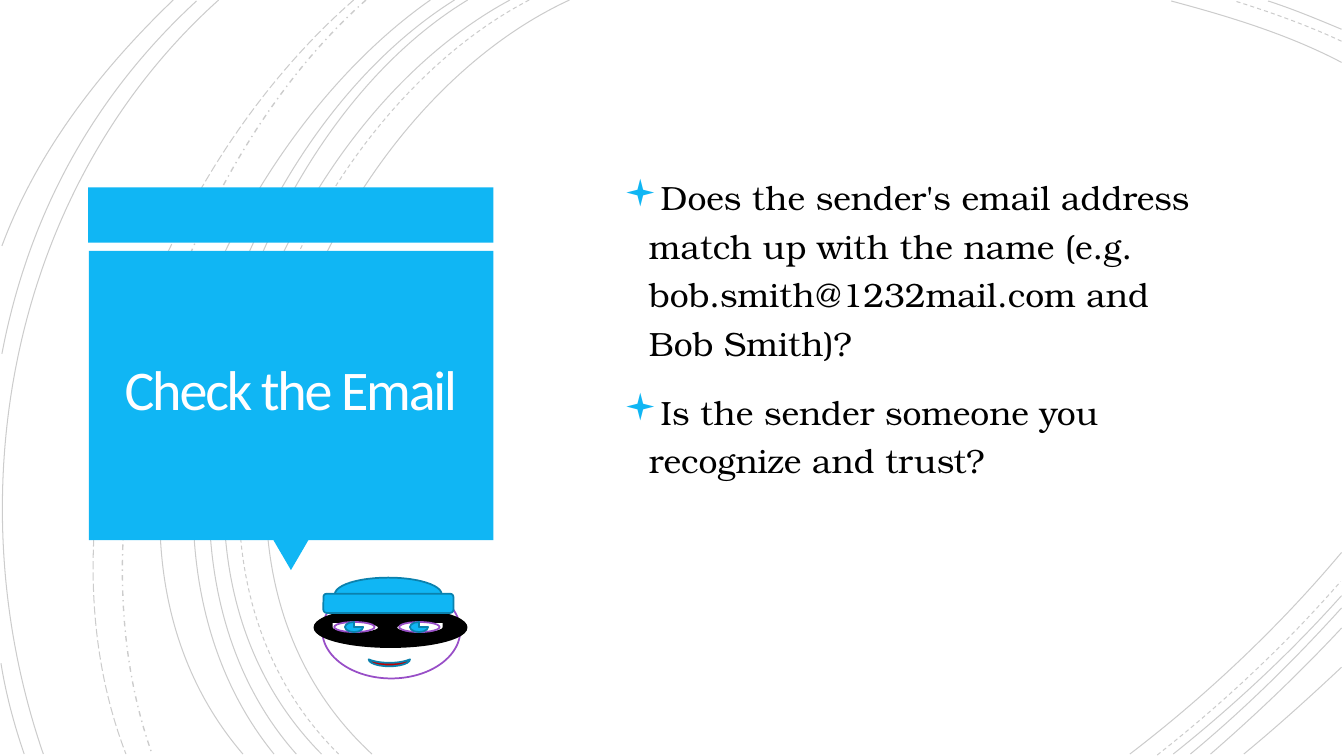
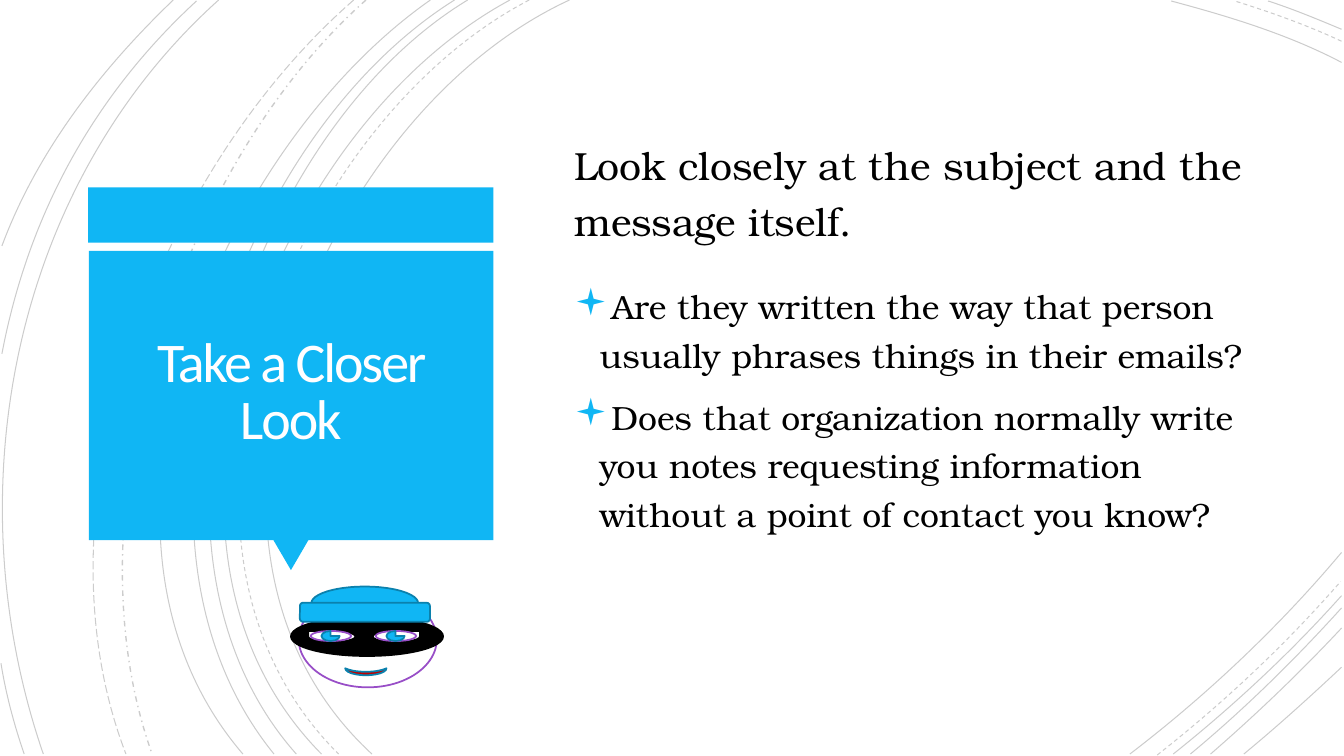
"""Build two slides on checking suspicious emails."""
import lxml.etree
import pptx
import pptx.dml.color
import pptx.enum.dml
import pptx.enum.shapes
import pptx.enum.text
import pptx.oxml.ns
import pptx.util

Pt = pptx.util.Pt
SHAPE = pptx.enum.shapes.MSO_SHAPE
DASH = pptx.enum.dml.MSO_LINE

BLUE, DARK_BLUE, PURPLE = "10B6F4", "0B81AD", "984EC7"
BLACK, WHITE, TITLE_WHITE, RED = "000000", "FFFFFF", "FFFEFF", "C00000"
TITLE_FONT, BODY_FONT = "Calibri", "TeX Gyre Bonum"
BOTTOM = 538.6
RIGHT = 958.3

SOLID_ARCS = [
    [(406.8, 0), (226.8, 82.8), (103, 388.8), (265.7, BOTTOM)],
    [(364.3, 0), (194.4, 91.4), (79.2, 386.6), (229.7, BOTTOM)],
    [(334.1, 0), (175.7, 95.8), (79.2, 389.5), (211.7, BOTTOM)],
    [(324.7, 0), (166.3, 99.4), (69.8, 383.8), (195.8, BOTTOM)],
    [(307.4, 0), (156.2, 105.8), (38.2, 380.9), (173.5, BOTTOM)],
    [(156.2, 0), (7.9, 133.2), (-33.1, 352.8), (31, BOTTOM)],
    [(140.4, 0.7), (66.2, 69.1), (20.2, 154.1), (1.4, 252.7)],
    [(0.7, 473.8), (4.3, 496.1), (10.1, 517.7), (17.3, BOTTOM)],
    [(123.8, 0), (72, 49.7), (26.6, 108), (1.4, 175.7)],
    [(RIGHT, 44.6), (920.2, 24.5), (877, 11.5), (836.6, 0.7)],
    [(RIGHT, 20.9), (941, 13.7), (923.8, 6.5), (905.8, 0.7)],
    [(807.1, BOTTOM), (861.8, 496.8), (913.7, 447.8), (RIGHT, 394.6)],
    [(838.1, BOTTOM), (880.6, 504.7), (921.6, 466.6), (RIGHT, 425.5)],
    [(850.3, BOTTOM), (888.5, 506.9), (924.5, 471.6), (RIGHT, 434.2)],
    [(864.7, BOTTOM), (897.1, 510.5), (928.8, 480.2), (RIGHT, 448.6)],
    [(888.5, BOTTOM), (912.2, 519.1), (935.3, 498.2), (RIGHT, 476.6)],
]
DASHED_ARCS = [
    [(378, 0), (205.2, 90), (88.6, 386.6), (241.9, BOTTOM)],
    [(RIGHT, 29.5), (933.8, 18), (907.2, 8.6), (882, 0.7)],
    [(826.6, 539.3), (873.4, 502.6), (918, 460.8), (957.6, 415.4)],
]
DASH_DOT_ARCS = [[(261.4, 0), (126.7, 119.5), (46.8, 366.5), (108.7, BOTTOM)]]
LONG_DASH_ARCS = [[(252.7, 0), (113, 121.7), (20.9, 359.3), (90, BOTTOM)]]
ARC_STYLES = [
    (SOLID_ARCS, DASH.SOLID, 0.75),
    (DASHED_ARCS, DASH.DASH, 0.75),
    (DASH_DOT_ARCS, DASH.DASH_DOT, 1),
    (LONG_DASH_ARCS, DASH.LONG_DASH, 0.75),
]


def color(value):
    """Turn a hex string into a colour."""
    return pptx.dml.color.RGBColor.from_string(value)


def add_child(parent, tag, **attributes):
    """Append a DrawingML element to a parent."""
    return lxml.etree.SubElement(parent, pptx.oxml.ns.qn(tag), attributes)


def bend(arc):
    """Turn the straight segments of a freeform into one cubic curve."""
    segments = list(arc._element.iter(pptx.oxml.ns.qn("a:lnTo")))
    outline = segments[0].getparent()
    curve = add_child(outline, "a:cubicBezTo")
    for segment in segments:
        curve.append(segment[0])
        outline.remove(segment)


def add_arc(page, controls, dash, width):
    """Draw one faint background arc."""
    points = [(Pt(x), Pt(y)) for x, y in controls]
    builder = page.shapes.build_freeform(*points[0])
    builder.add_line_segments(points[1:], close=False)
    arc = builder.convert_to_shape()
    bend(arc)
    arc.shadow.inherit = False
    arc.fill.background()
    arc.line.color.rgb = color(BLACK)
    arc.line.width = Pt(width)
    arc.line.dash_style = dash
    ink = arc.line.fill._xPr.find(".//" + pptx.oxml.ns.qn("a:srgbClr"))
    add_child(ink, "a:alpha", val="20000")


def add_figure(page, kind, left, top, width, height, fill, line=None, turn=0):
    """Draw a filled preset shape, outlined if a line colour is given."""
    figure = page.shapes.add_shape(kind, Pt(left), Pt(top), Pt(width), Pt(height))
    figure.shadow.inherit = False
    figure.fill.solid()
    figure.fill.fore_color.rgb = color(fill)
    figure.rotation = turn
    if line:
        figure.line.color.rgb = color(line)
        figure.line.width = Pt(1.25)
    else:
        figure.line.fill.background()
    return figure


def add_frame(page, left, top, width, height):
    """Add a wrapping text box and return its text frame."""
    box = page.shapes.add_textbox(Pt(left), Pt(top), Pt(width), Pt(height))
    box.text_frame.word_wrap = True
    return box.text_frame


def set_font(para, name, size, ink):
    """Set the font shared by a whole paragraph."""
    para.font.name = name
    para.font.size = Pt(size)
    para.font.color.rgb = color(ink)


def add_title(page, title):
    """Draw the blue speech panel and the title on it."""
    add_figure(page, SHAPE.RECTANGLE, 63, 133.8, 289.4, 39.6, BLUE)
    add_figure(page, SHAPE.ISOSCELES_TRIANGLE, 195.2, 385.6, 25.2, 21.6, BLUE, turn=180)
    add_figure(page, SHAPE.RECTANGLE, 63.4, 179.3, 289, 206.6, BLUE)
    frame = add_frame(page, 69.8, 184, 275.8, 194.4)
    frame.vertical_anchor = pptx.enum.text.MSO_ANCHOR.MIDDLE
    frame.margin_top = frame.margin_bottom = Pt(7.2)
    para = frame.paragraphs[0]
    para.alignment = pptx.enum.text.PP_ALIGN.CENTER
    para.line_spacing = 0.85
    set_font(para, TITLE_FONT, 40, TITLE_WHITE)
    span = para.add_run()
    span.text = title
    span.font._element.set("spc", "-150")


def add_bullet(para):
    """Give a paragraph a small blue square bullet."""
    properties = para._p.get_or_add_pPr()
    properties.set("marL", str(Pt(18)))
    properties.set("indent", str(-Pt(18)))
    add_child(add_child(properties, "a:buClr"), "a:srgbClr", val=BLUE)
    add_child(properties, "a:buSzPct", val="110000")
    add_child(properties, "a:buFont", typeface="Wingdings", charset="2")
    add_child(properties, "a:buChar", char="▪")


def add_body(page, left, top, width, height, texts, size=24, bullets=True):
    """Write body paragraphs in a text box."""
    frame = add_frame(page, left, top, width, height)
    for index, text in enumerate(texts):
        para = frame.add_paragraph() if index else frame.paragraphs[0]
        para.text = text
        para.line_spacing = 1.2
        para.space_before = Pt(10)
        if bullets:
            add_bullet(para)
        set_font(para, BODY_FONT, size, BLACK)


def add_thief(page, left, top):
    """Draw the masked face with its hat."""
    def part(kind, x, y, width, height, fill, line, turn=0):
        """Place one part relative to the face."""
        return add_figure(page, kind, left + x, top + y, width, height, fill, line, turn)

    part(SHAPE.OVAL, 5.6, 3.6, 98.6, 68.4, WHITE, PURPLE)
    part(SHAPE.OVAL, 0, 21.6, 108.7, 28, BLACK, BLACK)
    part(SHAPE.TEAR, 58.4, 31.7, 33.8, 7.9, WHITE, BLACK)
    mirrored = part(SHAPE.TEAR, 12.4, 31.7, 33.8, 7.9, WHITE, BLACK)
    mirrored._element.spPr.xfrm.set("flipH", "1")
    part(SHAPE.OVAL, 14.6, 0, 76.3, 23.8, BLUE, DARK_BLUE)
    part(SHAPE.ROUNDED_RECTANGLE, 6.4, 11.5, 92.9, 13.7, BLUE, DARK_BLUE)
    part(SHAPE.MOON, 51, 46.1, 5, 29.5, RED, DARK_BLUE, turn=270)
    for x in (14.2, 60.6):
        part(SHAPE.OVAL, x, 31.7, 28.8, 7.2, WHITE, PURPLE)
        part(SHAPE.PIE, x + 7.6, 31.7, 13, 7.2, BLUE, DARK_BLUE)


def add_page(deck, title):
    """Add a slide with the shared background and title."""
    page = deck.slides.add_slide(deck.slide_layouts[6])
    for arcs, dash, width in ARC_STYLES:
        for controls in arcs:
            add_arc(page, controls, dash, width)
    add_title(page, title)
    return page


def main():
    """Build and save the deck."""
    deck = pptx.Presentation()
    deck.slide_width, deck.slide_height = Pt(960), Pt(540)

    page = add_page(deck, "Check the Email")
    add_body(page, 438.5, 117.4, 422.6, 188, [
        "Does the sender's email address match up with the name "
        "(e.g. bob.smith@1232mail.com and Bob Smith)?"])
    add_body(page, 438.5, 270.7, 422.6, 108, [
        "Is the sender someone you recognize and trust?"])
    add_thief(page, 224.6, 412.6)

    page = add_page(deck, "Take a Closer Look")
    add_body(page, 403.2, 90.7, 494, 188, [
        "Look closely at the subject and the message itself."], size=28, bullets=False)
    add_body(page, 403.2, 195.1, 494, 188, [
        "Are they written the way that person usually phrases things in their emails?",
        "Does that organization normally write you notes requesting information "
        "without a point of contact you know?"])
    add_thief(page, 207.8, 419)

    deck.save("out.pptx")


if __name__ == "__main__":
    main()
